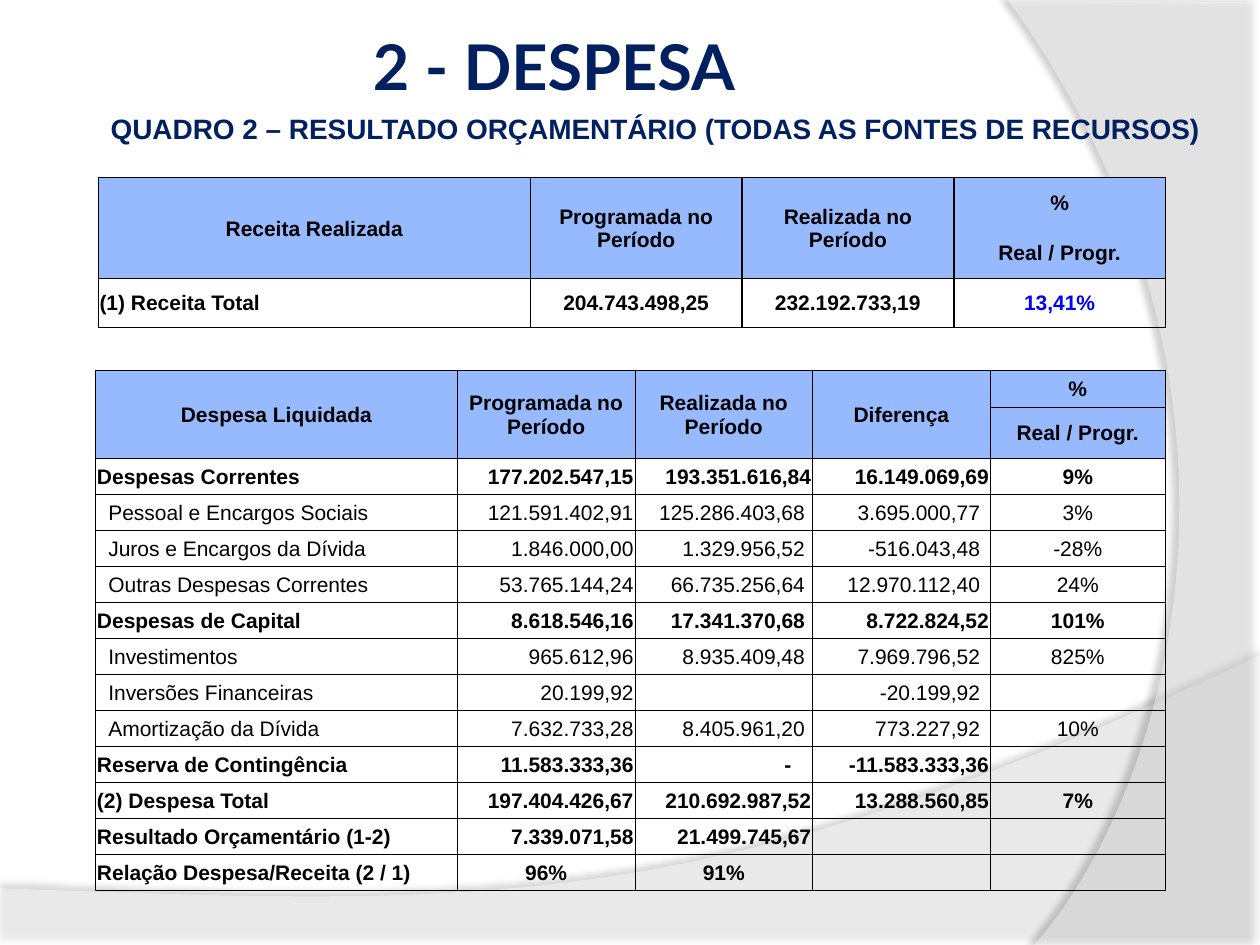
import lxml.etree
import pptx
import pptx.dml.color
import pptx.enum.text
import pptx.oxml.ns
import pptx.util

NAVY = pptx.dml.color.RGBColor(0x00, 0x20, 0x60)
BLACK = pptx.dml.color.RGBColor(0x00, 0x00, 0x00)
WHITE = pptx.dml.color.RGBColor(0xFF, 0xFF, 0xFF)
BLUE = pptx.dml.color.RGBColor(0x00, 0x00, 0xFF)
HEADER_BLUE = pptx.dml.color.RGBColor(0x97, 0xBA, 0xFF)

LEFT, CENTER, RIGHT = (pptx.enum.text.PP_ALIGN.LEFT, pptx.enum.text.PP_ALIGN.CENTER,
                       pptx.enum.text.PP_ALIGN.RIGHT)
MIDDLE = pptx.enum.text.MSO_ANCHOR.MIDDLE
WIDTH, HEIGHT = 10, 7.5
CELL_GAP, LABEL_INDENT = 0.01, 0.1

REVENUE_HEADS = ["Receita Realizada", "Programada no Período", "Realizada no Período"]
REVENUE = ["(1) Receita Total", "204.743.498,25", "232.192.733,19", "13,41%"]
EXPENSE_HEADS = ["Despesa Liquidada", *REVENUE_HEADS[1:], "Diferença"]
RATIO_HEADS = ["%", "Real / Progr."]
# Bold flag, then label, planned, realised, difference and ratio
EXPENSES = [
    (True, "Despesas Correntes", "177.202.547,15", "193.351.616,84", "16.149.069,69", "9%"),
    (False, "Pessoal e Encargos Sociais", "121.591.402,91", "125.286.403,68", "3.695.000,77", "3%"),
    (False, "Juros e Encargos da Dívida", "1.846.000,00", "1.329.956,52", "-516.043,48", "-28%"),
    (False, "Outras Despesas Correntes", "53.765.144,24", "66.735.256,64", "12.970.112,40", "24%"),
    (True, "Despesas de Capital", "8.618.546,16", "17.341.370,68", "8.722.824,52", "101%"),
    (False, "Investimentos", "965.612,96", "8.935.409,48", "7.969.796,52", "825%"),
    (False, "Inversões Financeiras", "20.199,92", "", "-20.199,92", ""),
    (False, "Amortização da Dívida", "7.632.733,28", "8.405.961,20", "773.227,92", "10%"),
    (True, "Reserva de Contingência", "11.583.333,36", "-", "-11.583.333,36", ""),
    (True, "(2) Despesa Total", "197.404.426,67", "210.692.987,52", "13.288.560,85", "7%"),
    (True, "Resultado Orçamentário (1-2)", "7.339.071,58", "21.499.745,67", "", ""),
    (True, "Relação Despesa/Receita (2 / 1)", "96%", "91%", "", ""),
]


def inches(*lengths):
    return [pptx.util.Inches(length) for length in lengths]


def set_values(target, values):
    for name, value in values.items():
        setattr(target, name, value)


def write(paragraph, text, size, font="Arial", color=BLACK, bold=True, align=LEFT):
    paragraph.alignment = align
    if text:
        run = paragraph.add_run()
        run.text = text
        set_values(run.font, {"size": pptx.util.Pt(size), "name": font, "bold": bold})
        run.font.color.rgb = color
    else:  # keeps an empty cell as low as its neighbours
        lxml.etree.SubElement(paragraph._p, pptx.oxml.ns.qn("a:endParaRPr"), sz=str(size * 100))


def curve(start, pull_out, pull_in, end, steps=40):
    """Points along a cubic Bézier curve."""
    points = []
    for step in range(steps + 1):
        t = step / steps
        weights = ((1 - t) ** 3, 3 * t * (1 - t) ** 2, 3 * t * t * (1 - t), t ** 3)
        corners = (start, pull_out, pull_in, end)
        points.append(tuple(sum(w * c[axis] for w, c in zip(weights, corners)) for axis in (0, 1)))
    return points


def add_wave(slide, outline, opacity, shadow_opacity, distance, direction):
    """A translucent white wave with a soft shadow, behind the title."""
    points = [inches(*point) for point in outline]
    builder = slide.shapes.build_freeform(*points[0])
    builder.add_line_segments(points[1:], close=True)
    wave = builder.convert_to_shape()
    wave.fill.solid()
    wave.fill.fore_color.rgb = WHITE
    wave.line.fill.background()
    wave.shadow.inherit = False
    qn, sub = pptx.oxml.ns.qn, lxml.etree.SubElement
    properties = wave.element.spPr
    sub(properties.find(f".//{qn('a:srgbClr')}"), qn("a:alpha"), val=str(opacity * 1000))
    shadow = sub(properties.find(qn("a:effectLst")), qn("a:outerShdw"),
                 blurRad=str(pptx.util.Pt(4)), dist=str(pptx.util.Pt(distance)),
                 dir=str(direction * 60000), algn="ctr", rotWithShape="0")
    sub(sub(shadow, qn("a:srgbClr"), val=str(BLACK)), qn("a:alpha"), val=str(shadow_opacity * 1000))
    slide.shapes.title.element.addprevious(wave.element)


def add_title(slide, text):
    title = slide.shapes.title
    set_values(title, dict(zip(("left", "top", "width", "height"), inches(1.22, 0, 8.52, 0.91))))
    frame = title.text_frame
    set_values(frame, {"auto_size": pptx.enum.text.MSO_AUTO_SIZE.NONE, "vertical_anchor": MIDDLE})
    set_values(frame, dict(zip(("margin_left", "margin_top", "margin_bottom"), inches(1.74, 0.17, 0.05))))
    write(frame.paragraphs[0], text, 36, "Lato", NAVY)


def add_subtitle(slide, text):
    frame = slide.shapes.add_textbox(*inches(0.78, 0.83, 8.95, 0.32)).text_frame
    set_values(frame, {"word_wrap": True, "vertical_anchor": MIDDLE, "margin_bottom": 0})
    write(frame.paragraphs[0], text, 16, color=NAVY)


def add_borders(cell, width, hidden=""):
    qn, sub = pptx.oxml.ns.qn, lxml.etree.SubElement
    for side in "LRTB":
        line = sub(cell._tc.get_or_add_tcPr(), qn(f"a:ln{side}"), w=str(pptx.util.Pt(width)))
        if side == hidden:
            sub(line, qn("a:noFill"))
        else:
            sub(sub(line, qn("a:solidFill")), qn("a:srgbClr"), val=str(BLACK))


def fill_cell(cell, text, align=CENTER, left=CELL_GAP, right=CELL_GAP, header=False, **style):
    margins = inches(left, right, CELL_GAP, 0)
    set_values(cell, dict(zip(("margin_left", "margin_right", "margin_top", "margin_bottom"), margins)))
    cell.vertical_anchor = MIDDLE
    if header:
        cell.fill.solid()
        cell.fill.fore_color.rgb = HEADER_BLUE
    else:
        cell.fill.background()
    write(cell.text_frame.paragraphs[0], text, 12, align=align, **style)


def add_grid(slide, left, top, widths, heights, heads, border, ratio_divided):
    """An outlined table with a two-row header; the ratio head is split in two."""
    frame = slide.shapes.add_table(len(heights), len(widths),
                                   *inches(left, top, sum(widths), sum(heights)))
    grid = frame.table
    set_values(grid, {"first_row": False, "horz_banding": False})
    for column, width in zip(grid.columns, inches(*widths)):
        column.width = width
    for row, height in zip(grid.rows, inches(*heights)):
        row.height = height
    ratio = len(heads)
    for row in range(len(heights)):
        for column in range(len(widths)):
            split = column == ratio and not ratio_divided
            hidden = {0: "B", 1: "T"}.get(row, "") if split else ""
            add_borders(grid.cell(row, column), border, hidden)
    for column, head in enumerate(heads):
        fill_cell(grid.cell(0, column), head, header=True)
        fill_cell(grid.cell(1, column), "", header=True)
        grid.cell(0, column).merge(grid.cell(1, column))
    for row, head in enumerate(RATIO_HEADS):
        fill_cell(grid.cell(row, ratio), head, header=True)
    return grid


def add_revenue(slide):
    grid = add_grid(slide, 0.78, 1.41, [3.43] + [1.68] * 3, [0.39] * 3, REVENUE_HEADS, 1, False)
    for column, text in enumerate(REVENUE):
        fill_cell(grid.cell(2, column), text, align=CENTER if column else LEFT,
                  color=BLUE if column == 3 else BLACK)


def add_expenses(slide):
    heights = [0.29, 0.41] + [3.43 / len(EXPENSES)] * len(EXPENSES)
    grid = add_grid(slide, 0.76, 2.94, [2.87] + [1.41] * 3 + [1.39], heights, EXPENSE_HEADS, 0.5, True)
    for row, (bold, label, *amounts) in enumerate(EXPENSES, start=2):
        fill_cell(grid.cell(row, 0), label, LEFT, left=CELL_GAP if bold else LABEL_INDENT, bold=bold)
        # Detail amounts stand a little off the right edge
        gaps = [CELL_GAP, CELL_GAP if bold else 0.06, CELL_GAP if bold else 0.08, CELL_GAP]
        if label == "Despesas de Capital":
            gaps[1] = 0.06
        for column, (text, gap) in enumerate(zip(amounts, gaps), start=1):
            align = CENTER if text.endswith("%") else RIGHT
            fill_cell(grid.cell(row, column), text, align, right=0.17 if text == "-" else gap, bold=bold)


def main():
    deck = pptx.Presentation()
    deck.slide_width, deck.slide_height = inches(WIDTH, HEIGHT)
    slide = deck.slides.add_slide(deck.slide_layouts[5])

    # Background waves
    low_wave = [(0, HEIGHT), (WIDTH, HEIGHT), *curve((WIDTH, 5.2), (5.59, 7.29), (3.91, 7.19), (0, 7.05))]
    side_wave = [(WIDTH, 0.02), (WIDTH, HEIGHT), *curve((8.21, HEIGHT), (9.35, 6.19), (10.18, 3), (8, 0))]
    add_wave(slide, low_wave, 45, 35, 3.5, 270)
    add_wave(slide, side_wave, 40, 45, 4, 180)

    # Headings and tables
    add_title(slide, "2 - DESPESA")
    add_subtitle(slide, "QUADRO 2 – RESULTADO ORÇAMENTÁRIO (TODAS AS FONTES DE RECURSOS)")
    add_revenue(slide)
    add_expenses(slide)
    deck.save("out.pptx")


if __name__ == "__main__":
    main()
